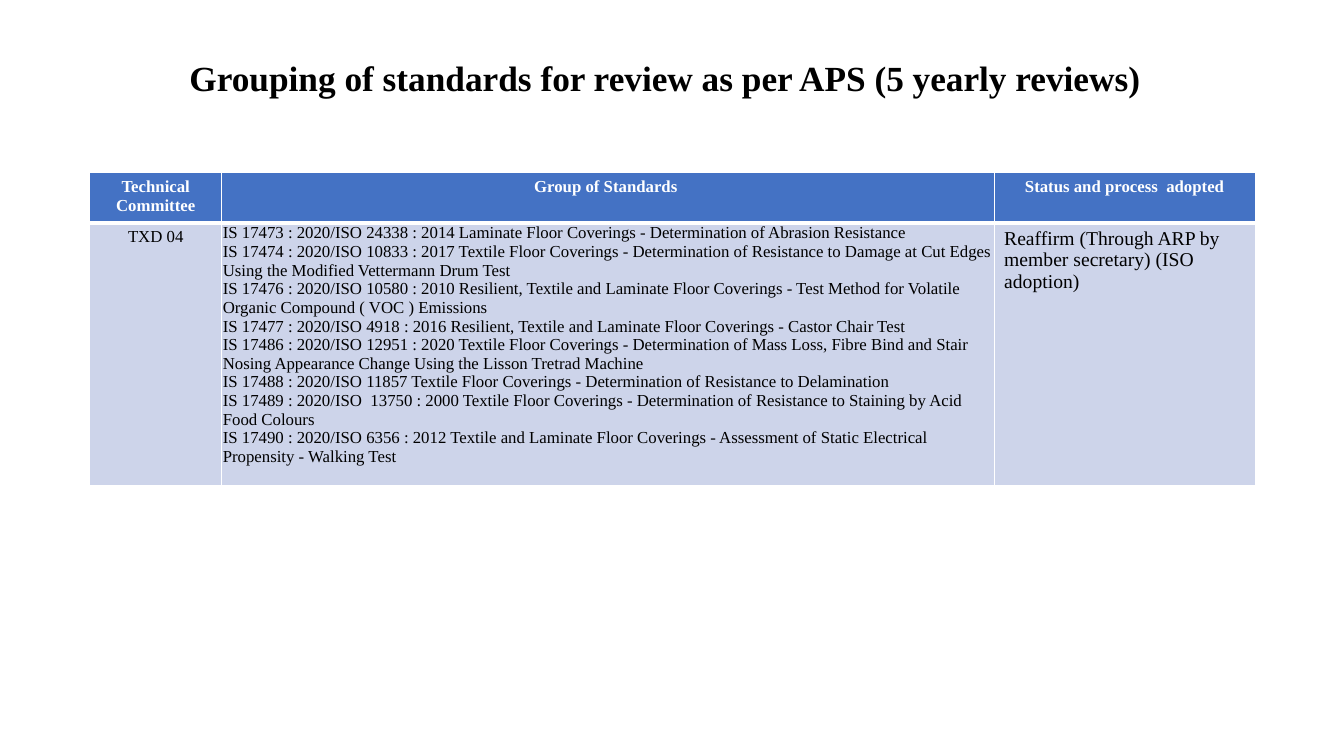
from lxml.etree import SubElement
from pptx import Presentation
from pptx.dml.color import RGBColor
from pptx.enum.text import MSO_ANCHOR, PP_ALIGN
from pptx.oxml.ns import qn
from pptx.util import Inches, Pt

FONT = "Times New Roman"
COLORS = {"text": "000000", "white": "FFFFFF", "header": "4472C4", "body": "CDD4EA"}
TITLE = "Grouping of standards for review as per APS (5 yearly reviews) "
COLUMN_WIDTHS = [1.31, 7.66, 2.59]
ROW_HEIGHTS = [0.46, 2.55]
HEADERS = ["Technical Committee", "Group of Standards ", "Status and process  adopted"]
STANDARDS = [
    "IS 17473 : 2020/ISO 24338 : 2014 Laminate Floor Coverings - Determination of Abrasion Resistance",
    "IS 17474 : 2020/ISO 10833 : 2017 Textile Floor Coverings - Determination of Resistance to Damage "
    "at Cut Edges Using the Modified Vettermann Drum Test",
    "IS 17476 : 2020/ISO 10580 : 2010 Resilient, Textile and Laminate Floor Coverings - Test Method "
    "for Volatile Organic Compound ( VOC ) Emissions",
    "IS 17477 : 2020/ISO 4918 : 2016 Resilient, Textile and Laminate Floor Coverings - Castor Chair Test",
    "IS 17486 : 2020/ISO 12951 : 2020 Textile Floor Coverings - Determination of Mass Loss, Fibre Bind "
    "and Stair Nosing Appearance Change Using the Lisson Tretrad Machine",
    "IS 17488 : 2020/ISO 11857 Textile Floor Coverings - Determination of Resistance to Delamination",
    "IS 17489 : 2020/ISO  13750 : 2000 Textile Floor Coverings - Determination of Resistance to "
    "Staining by Acid Food Colours",
    "IS 17490 : 2020/ISO 6356 : 2012 Textile and Laminate Floor Coverings - Assessment of Static "
    "Electrical Propensity - Walking Test",
]
STATUS = "Reaffirm (Through ARP by member secretary) (ISO adoption)"


def write_text(text_frame, text, size, color="text", bold=False, alignment=PP_ALIGN.LEFT):
    text_frame.text = text
    for paragraph in text_frame.paragraphs:
        paragraph.alignment = alignment
        for run in paragraph.runs:
            run.font.name = FONT
            run.font.size = Pt(size)
            run.font.bold = bold
            run.font.color.rgb = RGBColor.from_string(COLORS[color])


def style_cell(cell, fill, bottom_width=1):
    """Give the cell white borders and a solid fill."""
    properties = cell._tc.get_or_add_tcPr()
    for side, width in (("L", 1), ("R", 1), ("T", 1), ("B", bottom_width)):
        line = SubElement(properties, qn(f"a:ln{side}"), w=str(Pt(width)))
        line_fill = SubElement(line, qn("a:solidFill"))
        SubElement(line_fill, qn("a:srgbClr"), val=COLORS["white"])
    cell.fill.solid()
    cell.fill.fore_color.rgb = RGBColor.from_string(COLORS[fill])


def add_title(slide, left, top, width, height):
    box = slide.shapes.add_textbox(Inches(left), Inches(top), Inches(width), Inches(height))
    text_frame = box.text_frame
    text_frame.word_wrap = True
    text_frame.vertical_anchor = MSO_ANCHOR.BOTTOM
    write_text(text_frame, TITLE, 25.2, bold=True, alignment=PP_ALIGN.CENTER)
    text_frame.paragraphs[0].line_spacing = 0.9


def add_standards_table(slide, left, top, width, height):
    table = slide.shapes.add_table(
        len(ROW_HEIGHTS), len(COLUMN_WIDTHS),
        Inches(left), Inches(top), Inches(width), Inches(height),
    ).table
    for column, share in zip(table.columns, COLUMN_WIDTHS):
        column.width = Inches(width * share / sum(COLUMN_WIDTHS))
    for row, share in zip(table.rows, ROW_HEIGHTS):
        row.height = Inches(height * share / sum(ROW_HEIGHTS))

    for cell, header in zip(table.rows[0].cells, HEADERS):
        style_cell(cell, "header", bottom_width=3)
        write_text(cell.text_frame, header, 12, "white", True, PP_ALIGN.CENTER)

    committee, standards, status = table.rows[1].cells
    for cell in (committee, standards, status):
        style_cell(cell, "body")
    write_text(committee.text_frame, "TXD 04", 12, alignment=PP_ALIGN.CENTER)
    write_text(standards.text_frame, "\n".join(STANDARDS), 12)
    write_text(status.text_frame, STATUS, 14)
    standards.margin_left = standards.margin_right = standards.margin_top = Inches(0.01)
    standards.margin_bottom = 0


def main():
    presentation = Presentation()
    presentation.slide_width = Inches(13.33)
    presentation.slide_height = Inches(7.5)
    slide = presentation.slides.add_slide(presentation.slide_layouts[6])
    add_title(slide, 0.89, 0.57, 11.5, 0.46)
    add_standards_table(slide, 0.89, 1.71, sum(COLUMN_WIDTHS), sum(ROW_HEIGHTS))
    presentation.save("out.pptx")


if __name__ == "__main__":
    main()
